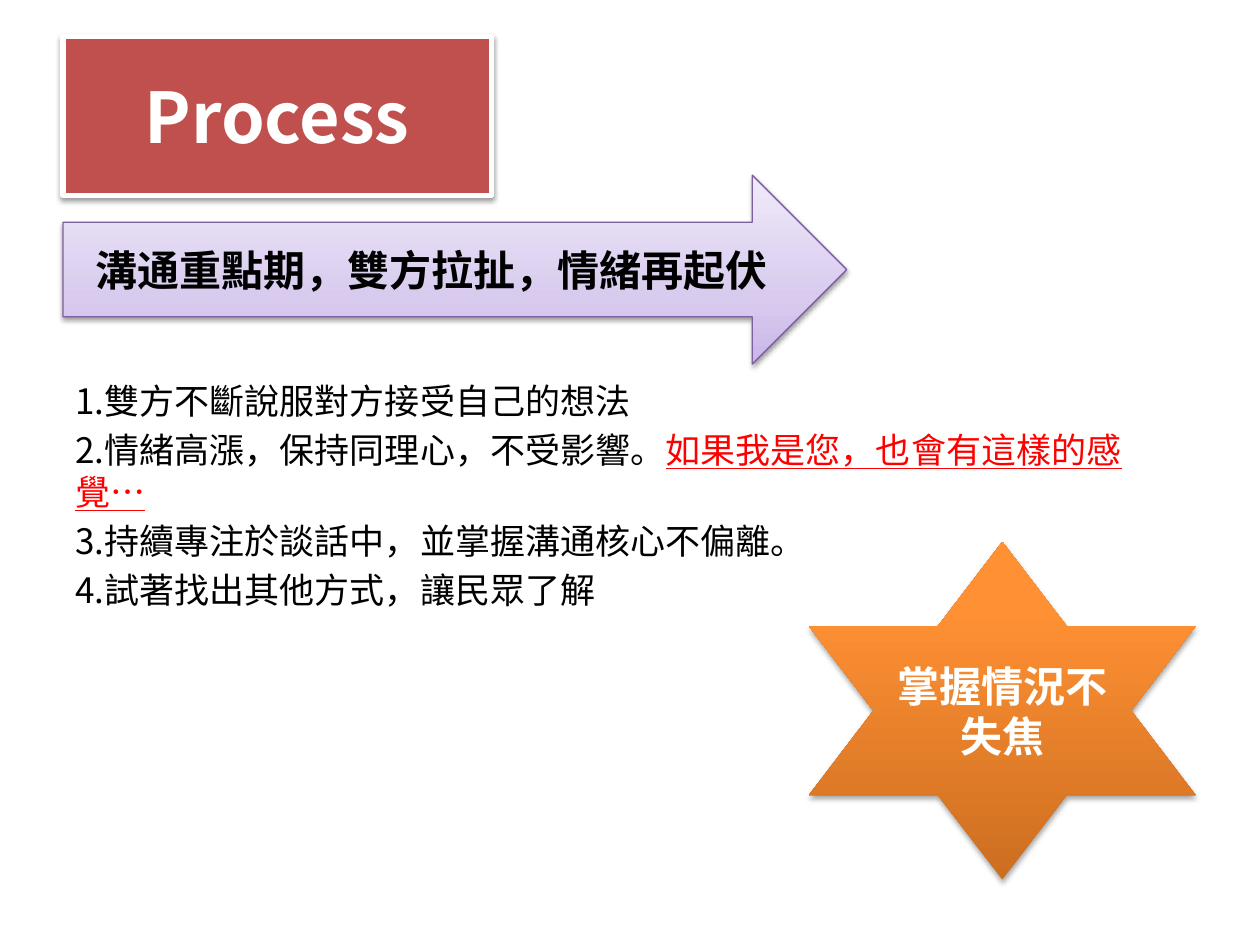
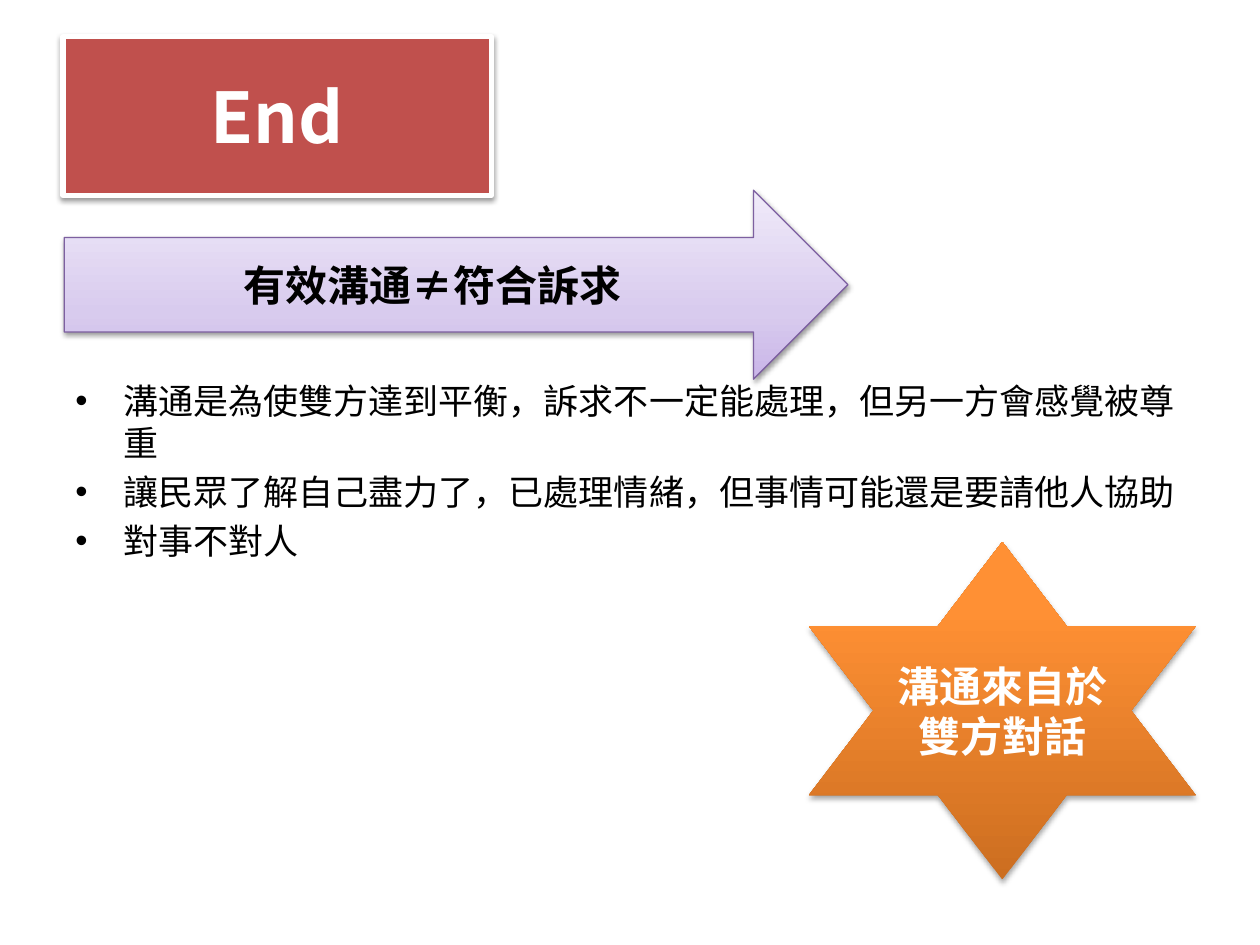
from lxml.etree import SubElement
from pptx import Presentation
from pptx.dml.color import RGBColor
from pptx.enum.shapes import MSO_SHAPE
from pptx.enum.text import MSO_ANCHOR, MSO_AUTO_SIZE, PP_ALIGN
from pptx.oxml.ns import qn
from pptx.util import Inches, Pt

FONT = "Noto Sans CJK SC"
WHITE = RGBColor(0xFF, 0xFF, 0xFF)
BLACK = RGBColor(0x00, 0x00, 0x00)
ALERT = RGBColor(0xFF, 0x00, 0x00)
BRICK = RGBColor(0xC0, 0x50, 0x4D)
PURPLE = RGBColor(0x7D, 0x60, 0xA0)
LILACS = {0: RGBColor(0xC9, 0xB5, 0xE8), 35: RGBColor(0xD8, 0xCB, 0xEE),
          100: RGBColor(0xF0, 0xEA, 0xF9)}
ORANGES = {0: RGBColor(0xCC, 0x6E, 0x20), 80: RGBColor(0xFF, 0x90, 0x34),
           100: RGBColor(0xFF, 0x91, 0x36)}

COLS, ROWS = 20, 15
WIDTH, HEIGHT = Inches(10), Inches(7.5)
TITLE_AT = (1, 0.58, 6.8, 2.52)
BODY_AT = (1, 5.92, 18, 7.48)
STAR_AT = (12.84, 8.6, 6.14, 5.36)
ARROW_SIZE = (12.44, 3)

TITLE_FORMAT = {"size": Pt(40), "bold": True}
LABEL_FORMAT = {"size": Pt(24), "bold": True}
BODY_FORMAT = {"size": Pt(20)}
ALERT_FORMAT = {"size": Pt(20), "underline": True}

SLIDES = [
    {"title": "Process", "arrow": "溝通重點期，雙方拉扯，情緒再起伏", "arrow_at": (1, 2.78),
     "star": "掌握情況不失焦", "bullet": False,
     "body": [("1.雙方不斷說服對方接受自己的想法",),
              ("2.情緒高漲，保持同理心，不受影響。", "如果我是您，也會有這樣的感覺…"),
              ("3.持續專注於談話中，並掌握溝通核心不偏離。",),
              ("4.試著找出其他方式，讓民眾了解",)]},
    {"title": "End", "arrow": "有效溝通≠符合訴求", "arrow_at": (1.02, 3.02),
     "star": "溝通來自於雙方對話", "bullet": True,
     "body": [("溝通是為使雙方達到平衡，訴求不一定能處理，但另一方會感覺被尊重",),
              ("讓民眾了解自己盡力了，已處理情緒，但事情可能還是要請他人協助",),
              ("對事不對人",)]},
]


def grid(col, row, cols, rows):
    """Turn grid columns and rows into left, top, width and height."""
    return [int(WIDTH * col / COLS), int(HEIGHT * row / ROWS),
            int(WIDTH * cols / COLS), int(HEIGHT * rows / ROWS)]


def place(sp, at):
    """Move and size a shape on the grid."""
    for name, value in zip(("left", "top", "width", "height"), grid(*at)):
        setattr(sp, name, value)


def add_run(p, text, color, values):
    """Add a run in the shared font with the given format values."""
    r = p.add_run()
    r.text = text
    for name, value in {"name": FONT, **values}.items():
        setattr(r.font, name, value)
    r.font.color.rgb = color
    SubElement(r.font._element, qn("a:ea"), typeface=FONT)


def add_label(sp, text, color, values):
    """Write one centred label in the middle of a shape."""
    tf = sp.text_frame
    for name, value in {"word_wrap": True, "auto_size": MSO_AUTO_SIZE.NONE,
                        "vertical_anchor": MSO_ANCHOR.MIDDLE}.items():
        setattr(tf, name, value)
    p = tf.paragraphs[0]
    p.alignment = PP_ALIGN.CENTER
    add_run(p, text, color, values)


def add_shadow(sp, alpha, distance):
    """Cast a soft black shadow straight down."""
    sp.shadow.inherit = False
    effects = sp.element.spPr.find(qn("a:effectLst"))
    shadow = SubElement(effects, qn("a:outerShdw"), blurRad=str(Pt(3.1)),
                        dist=str(Pt(distance)), dir="5400000", rotWithShape="0")
    black = SubElement(shadow, qn("a:srgbClr"), val=str(BLACK))
    SubElement(black, qn("a:alpha"), val=str(alpha * 1000))


def fill_gradient(sp, stops):
    """Fill a shape with colour stops running from bottom to top."""
    sp.fill.gradient()
    sp.fill.gradient_angle = 90
    stop_list = sp.element.spPr.find(qn("a:gradFill")).find(qn("a:gsLst"))
    stop_list[:] = []
    for pos, color in stops.items():
        stop = SubElement(stop_list, qn("a:gs"), pos=str(pos * 1000))
        SubElement(stop, qn("a:srgbClr"), val=str(color))


def add_title(s, text):
    """Format the title placeholder as a framed brick panel."""
    sp = s.shapes.title
    place(sp, TITLE_AT)
    sp.fill.solid()
    sp.fill.fore_color.rgb = BRICK
    sp.line.color.rgb = WHITE
    sp.line.width = Pt(3)
    add_shadow(sp, 38, 1.6)
    add_label(sp, text, WHITE, TITLE_FORMAT)


def add_arrow(s, text, at):
    """Add the lilac arrow that sums up the stage."""
    sp = s.shapes.add_shape(MSO_SHAPE.RIGHT_ARROW, *grid(*at, *ARROW_SIZE))
    fill_gradient(sp, LILACS)
    sp.line.color.rgb = PURPLE
    sp.line.width = Pt(0.75)
    add_shadow(sp, 38, 1.6)
    add_label(sp, text, BLACK, LABEL_FORMAT)


def add_star(s, text):
    """Add the orange star with the key message."""
    sp = s.shapes.add_shape(MSO_SHAPE.STAR_6_POINT, *grid(*STAR_AT))
    fill_gradient(sp, ORANGES)
    sp.line.fill.background()
    add_shadow(sp, 35, 1.8)
    add_label(sp, text, WHITE, LABEL_FORMAT)


def add_bullet(p):
    """Give a paragraph a hanging round bullet."""
    pPr = p._p.get_or_add_pPr()
    pPr.set("marL", str(Inches(0.38)))
    pPr.set("indent", str(-Inches(0.38)))
    SubElement(pPr, qn("a:buFont"), typeface="Arial")
    SubElement(pPr, qn("a:buChar"), char="•")


def add_body(s, lines, bullet):
    """Add the points, with any second part of a line as an alert."""
    tf = s.shapes.add_textbox(*grid(*BODY_AT)).text_frame
    tf.word_wrap = True
    for i, (text, *alerts) in enumerate(lines):
        p = tf.add_paragraph() if i else tf.paragraphs[0]
        p.space_before = Pt(4 if i else 0)
        if bullet:
            add_bullet(p)
        add_run(p, text, BLACK, BODY_FORMAT)
        for alert in alerts:
            add_run(p, alert, ALERT, ALERT_FORMAT)


def main():
    """Build and save the presentation."""
    prs = Presentation()
    prs.slide_width, prs.slide_height = WIDTH, HEIGHT
    for stage in SLIDES:
        s = prs.slides.add_slide(prs.slide_layouts.get_by_name("Title Only"))
        add_body(s, stage["body"], stage["bullet"])
        add_title(s, stage["title"])
        add_arrow(s, stage["arrow"], stage["arrow_at"])
        add_star(s, stage["star"])
    prs.save("out.pptx")


if __name__ == "__main__":
    main()
